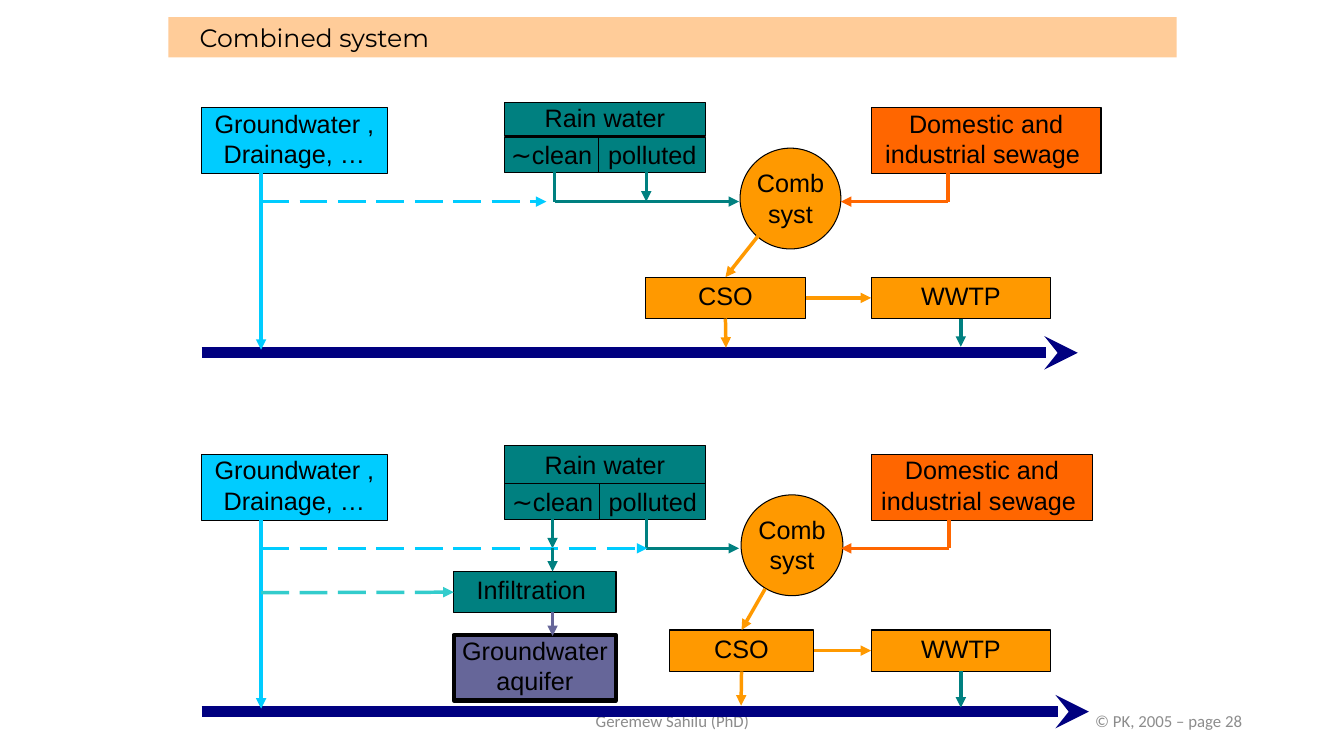
from lxml.etree import SubElement
from pptx import Presentation
from pptx.dml.color import RGBColor
from pptx.enum.dml import MSO_LINE_DASH_STYLE as Dash
from pptx.enum.shapes import MSO_CONNECTOR as Connector, MSO_SHAPE as Shape
from pptx.enum.text import MSO_ANCHOR as Anchor, PP_ALIGN as Align
from pptx.oxml.ns import qn
from pptx.util import Inches, Pt

COLOURS = {
    "black": "000000", "grey": "8C8C8C", "peach": "FFCC99", "cyan": "00CCFF",
    "teal": "008080", "orange": "FF9900", "red": "FF6600", "navy": "000080",
    "violet": "666699", "turquoise": "33CCCC",
}
TOP, LEFT, BOTTOM, RIGHT = range(4)

# name: (text, fill, bottom inset)
NODES = {
    "ground": ("Groundwater , Drainage, …", "cyan", 0.05),
    "rain": ("Rain water", "teal", 0.05),
    "clean": ("∼clean", "teal", 0.01),
    "polluted": ("polluted", "teal", 0.01),
    "sewage": ("Domestic and industrial sewage ", "red", 0.05),
    "combined": ("Comb syst", "orange", 0.01),
    "cso": ("CSO", "orange", 0.05),
    "wwtp": ("WWTP", "orange", 0.05),
    "infiltration": ("Infiltration ", "teal", 0.05),
    "aquifer": ("Groundwater aquifer", "violet", 0.05),
}

# places: left, top, width, height
# flows: colour, start, end, kind; an end is a point or a (node, side) pair
SCHEMES = [
    {
        "places": {
            "ground": (2, 1.07, 1.84, 0.65),
            "rain": (5, 1.02, 2, 0.33),
            "clean": (5, 1.36, 0.94, 0.35),
            "polluted": (5.94, 1.36, 1.06, 0.35),
            "sewage": (8.64, 1.07, 2.28, 0.65),
            "combined": (7.34, 1.47, 1, 1),
            "cso": (6.4, 2.75, 1.59, 0.41),
            "wwtp": (8.64, 2.75, 1.78, 0.41),
        },
        "flows": [
            ("navy", (2, 3.5), (10.69, 3.5), "river"),
            ("orange", ("cso", BOTTOM), (7.2, 3.45), "arrow"),
            ("teal", ("wwtp", BOTTOM), (9.53, 3.44), "arrow"),
            ("red", (9.4, 1.71), (9.4, 2), "plain"),
            ("red", (9.4, 2), (8.34, 2), "arrow"),
            ("teal", (5.5, 1.71), (5.5, 2), "plain"),
            ("teal", (5.5, 2), (7.33, 2), "arrow"),
            ("teal", (6.41, 1.71), (6.41, 2), "arrow"),
            ("cyan", (2.59, 1.71), (2.59, 3.47), "arrow"),
            ("cyan", (2.59, 2), (5.42, 2), "dashed"),
            ("orange", (7.52, 2.34), ("cso", TOP), "arrow"),
            ("orange", ("cso", RIGHT), ("wwtp", LEFT), "arrow"),
        ],
    },
    {
        "places": {
            "ground": (2, 4.51, 1.84, 0.65),
            "rain": (5, 4.42, 2, 0.42),
            "clean": (5, 4.8, 0.96, 0.35),
            "polluted": (5.95, 4.8, 1.05, 0.35),
            "sewage": (8.64, 4.51, 2.2, 0.65),
            "combined": (7.35, 4.91, 1.01, 1),
            "cso": (6.64, 6.25, 1.43, 0.41),
            "wwtp": (8.64, 6.25, 1.78, 0.41),
            "infiltration": (4.5, 5.67, 1.61, 0.41),
            "aquifer": (4.5, 6.3, 1.61, 0.65),
        },
        "flows": [
            ("navy", (2, 7.06), (10.8, 7.06), "river"),
            ("orange", ("cso", BOTTOM), (7.35, 7), "arrow"),
            ("teal", ("wwtp", BOTTOM), (9.53, 7.02), "arrow"),
            ("red", (9.41, 5.15), (9.41, 5.44), "plain"),
            ("red", (9.41, 5.44), (8.34, 5.44), "arrow"),
            ("teal", (6.41, 5.15), (6.41, 5.44), "plain"),
            ("teal", (6.41, 5.44), (7.33, 5.44), "arrow"),
            ("cyan", (2.59, 5.15), (2.59, 7.03), "arrow"),
            ("orange", (7.59, 5.84), ("cso", TOP), "arrow"),
            ("orange", ("cso", RIGHT), ("wwtp", LEFT), "arrow"),
            ("teal", ("clean", BOTTOM), (5.48, 5.44), "arrow"),
            ("violet", (5.48, 6.07), (5.48, 6.31), "arrow"),
            ("turquoise", (2.59, 5.88), ("infiltration", LEFT), "dashed"),
            ("cyan", (2.59, 5.44), (6.42, 5.44), "dashed"),
            ("teal", (5.48, 5.44), (5.48, 5.67), "arrow"),
        ],
    },
]
FOOTERS = [
    ("Geremew Sahilu (PhD)", (4.42, 6.95, 4.5, 0.4), Align.CENTER),
    ("© PK, 2005 – page 28", (9.42, 6.95, 3, 0.4), Align.RIGHT),
]
TITLE = ("Combined system", (1.67, 0.17, 10, 0.4))


def rgb(name):
    return RGBColor.from_string(COLOURS[name])


def inches(values):
    return [Inches(value) for value in values]


def write(shape, text, font, size, colour, align, margins=(0.1, 0.05, 0.1, 0.05)):
    """Put one paragraph in a shape; margins are left, top, right, bottom."""
    frame = shape.text_frame
    frame.word_wrap = True
    frame.vertical_anchor = Anchor.MIDDLE
    (frame.margin_left, frame.margin_top,
     frame.margin_right, frame.margin_bottom) = inches(margins)
    para = frame.paragraphs[0]
    para.text = text
    para.alignment = align
    para.font.name = font
    para.font.size = Pt(size)
    para.font.color.rgb = rgb(colour)


def add_filled(slide, kind, place, fill):
    shape = slide.shapes.add_shape(kind, *inches(place))
    shape.shadow.inherit = False
    shape.fill.solid()
    shape.fill.fore_color.rgb = rgb(fill)
    return shape


def add_node(slide, name, place):
    text, fill, bottom = NODES[name]
    kind = Shape.OVAL if name == "combined" else Shape.RECTANGLE
    box = add_filled(slide, kind, place, fill)
    box.line.color.rgb = rgb("black")
    box.line.width = Pt(3 if name == "aquifer" else 0.75)
    write(box, text, "Arial", 18, "black", Align.CENTER, (0, 0, 0, bottom))
    return box


def add_flow(slide, boxes, colour, start, end, kind):
    joined = [isinstance(stop[0], str) for stop in (start, end)]
    points = [(0, 0) if join else stop for join, stop in zip(joined, (start, end))]
    flow = slide.shapes.add_connector(
        Connector.STRAIGHT, *inches(points[0]), *inches(points[1]))
    if joined[0]:
        flow.begin_connect(boxes[start[0]], start[1])
    if joined[1]:
        flow.end_connect(boxes[end[0]], end[1])
    flow.line.color.rgb = rgb(colour)
    flow.line.width = Pt(8 if kind == "river" else 2.5)
    if kind == "dashed":
        flow.line.dash_style = Dash.LONG_DASH
    if kind != "plain":
        head = "stealth" if kind == "river" else "triangle"
        SubElement(flow.line._get_or_add_ln(), qn("a:tailEnd"), type=head)
    SubElement(flow._element.spPr, qn("a:effectLst"))


def main():
    deck = Presentation()
    deck.slide_width, deck.slide_height = Inches(13.33), Inches(7.5)
    slide = deck.slides.add_slide(deck.slide_layouts[6])

    for text, place, align in FOOTERS:
        footer = slide.shapes.add_textbox(*inches(place))
        write(footer, text, "Calibri", 12, "grey", align)

    for scheme in SCHEMES:
        boxes = {name: add_node(slide, name, place)
                 for name, place in scheme["places"].items()}
        for flow in scheme["flows"]:
            add_flow(slide, boxes, *flow)

    text, place = TITLE
    banner = add_filled(slide, Shape.RECTANGLE, place, "peach")
    banner.line.fill.background()
    write(banner, text, "Montserrat", 18, "black", Align.LEFT, (0.31, 0.05, 0.1, 0.05))
    deck.save("out.pptx")


if __name__ == "__main__":
    main()
